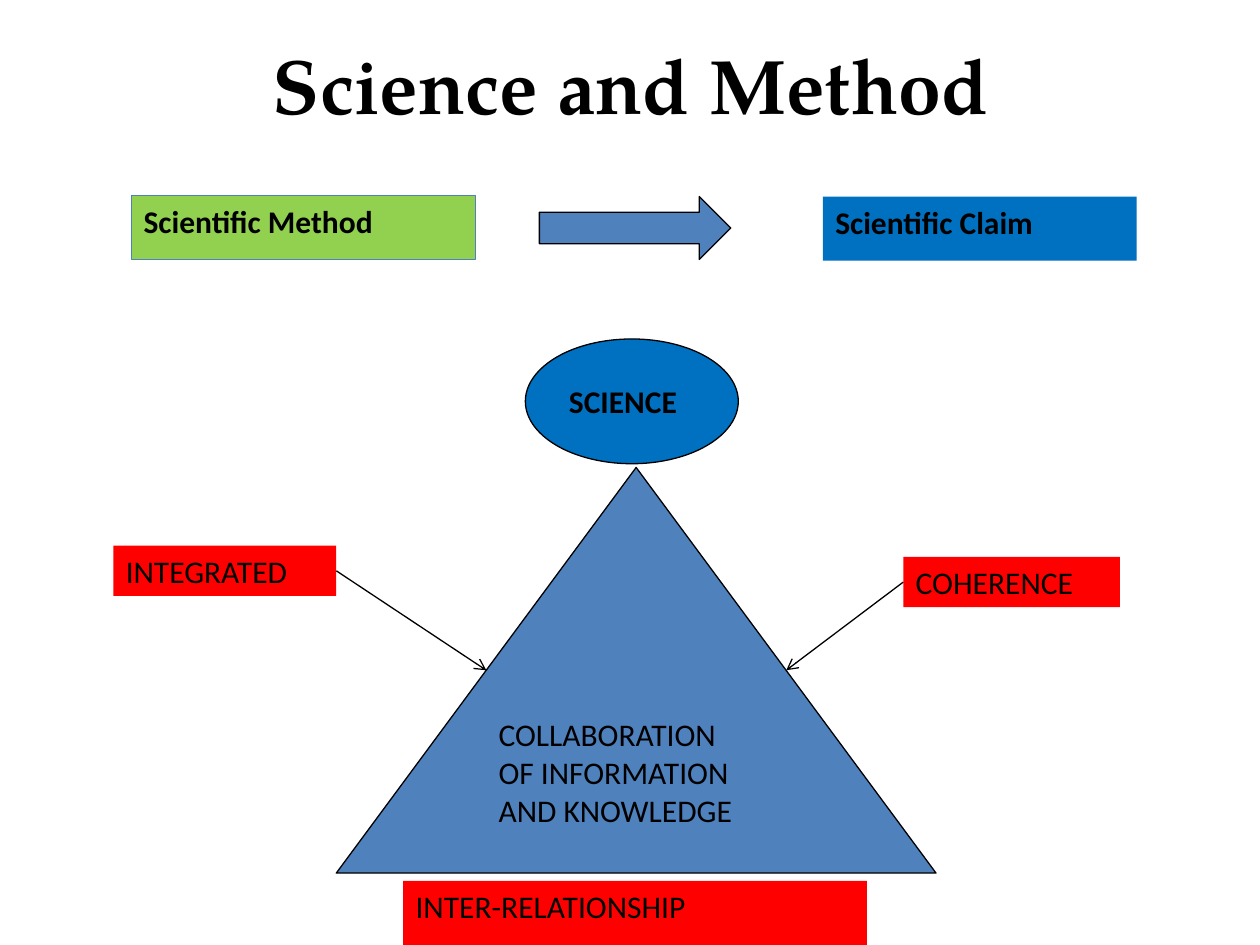
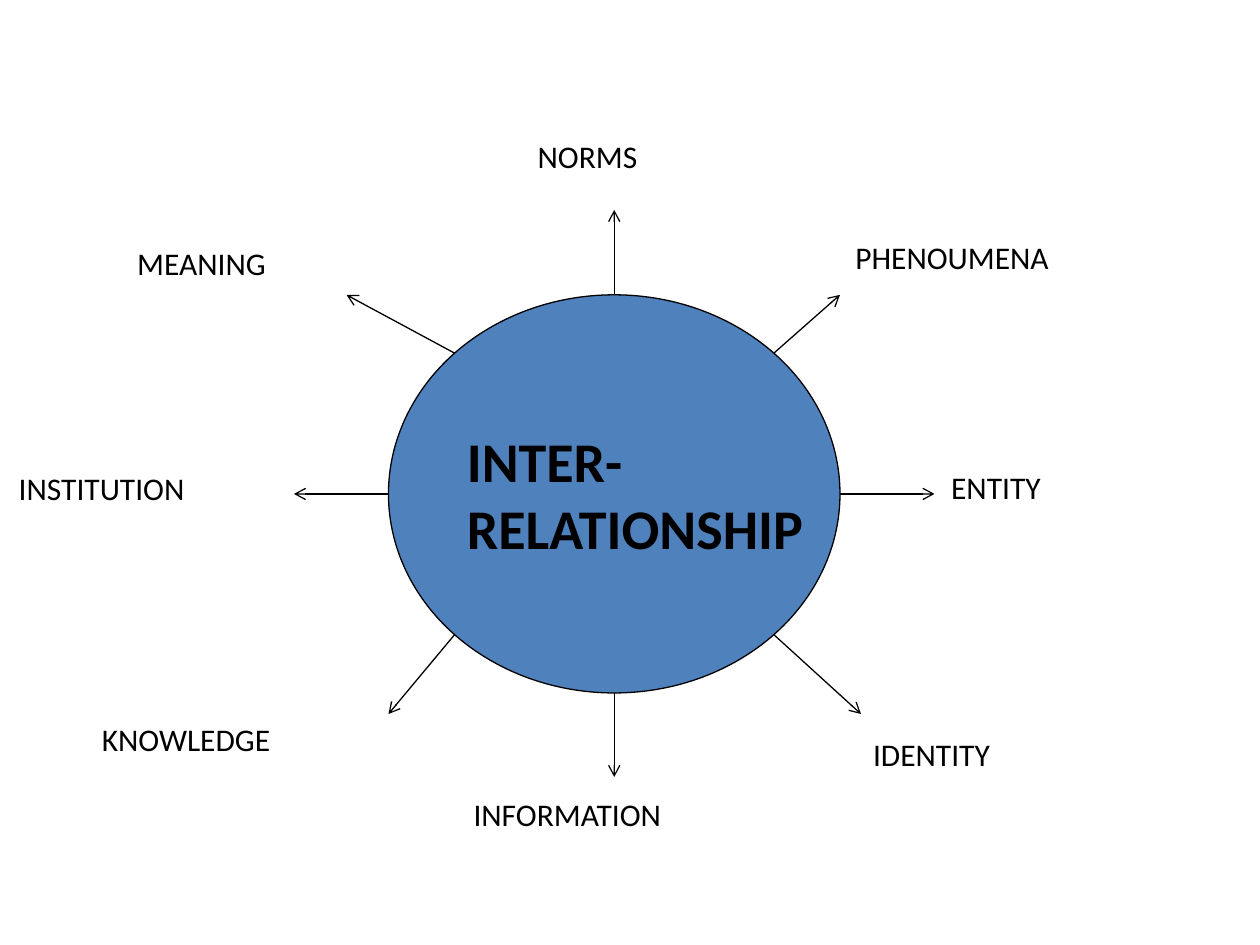
from dataclasses import dataclass
from math import cos, radians, sin
from typing import NamedTuple, Optional

from lxml import etree
from pptx import Presentation
from pptx.dml.color import RGBColor
from pptx.enum import shapes, text
from pptx.oxml import ns
from pptx.util import Pt

KIND = shapes.MSO_SHAPE
TOP, MIDDLE = text.MSO_ANCHOR.TOP, text.MSO_ANCHOR.MIDDLE
LEFT, CENTER = text.PP_ALIGN.LEFT, text.PP_ALIGN.CENTER


@dataclass(frozen=True)
class Theme:
    ink: str = "000000"
    blue: str = "4F81BD"
    deep: str = "0070C0"
    green: str = "92D050"
    red: str = "FF0000"
    head: str = "TeX Gyre Pagella"
    body: str = "Calibri"
    title: float = 44
    hub: float = 32
    label: float = 18
    line: float = 0.75


THEME = Theme()


class Area(NamedTuple):
    left: float
    top: float
    width: float
    height: float


class Style(NamedTuple):
    size: float = THEME.label
    bold: bool = False
    font: str = THEME.body
    align: text.PP_ALIGN = LEFT
    anchor: text.MSO_ANCHOR = TOP
    wrap: bool = True


class Block(NamedTuple):
    kind: shapes.MSO_SHAPE
    area: Area
    fill: str
    line: Optional[str] = None
    lines: tuple[str, ...] = ()
    style: Style = Style()


class Spoke(NamedTuple):
    """A label and the tip of the arrow that leaves the hub at an angle."""
    angle: float
    tip: tuple[float, float]
    word: str
    area: Area


def color(code: str) -> RGBColor:
    return RGBColor.from_string(code)


def write(shape, lines: tuple[str, ...], style: Style) -> None:
    frame = shape.text_frame
    frame.word_wrap = style.wrap
    frame.vertical_anchor = style.anchor
    for i, line in enumerate(lines):
        para = frame.paragraphs[0] if i == 0 else frame.add_paragraph()
        para.alignment = style.align
        run = para.add_run()
        run.text = line
        font = run.font
        font.name, font.size, font.bold = style.font, Pt(style.size), style.bold
        font.color.rgb = color(THEME.ink)


def label(slide, area: Area, word: str, style: Style = Style()) -> None:
    box = slide.shapes.add_textbox(*map(Pt, area))
    write(box, (word,), style)


def draw(slide, block: Block):
    shape = slide.shapes.add_shape(block.kind, *map(Pt, block.area))
    shape.shadow.inherit = False
    shape.fill.solid()
    shape.fill.fore_color.rgb = color(block.fill)
    if block.line:
        shape.line.color.rgb = color(block.line)
        shape.line.width = Pt(THEME.line)
    else:
        shape.line.fill.background()
    write(shape, block.lines, block.style)
    return shape


def arrow(slide, start: tuple[float, float], end: tuple[float, float]):
    link = slide.shapes.add_connector(
        shapes.MSO_CONNECTOR.STRAIGHT, *map(Pt, (*start, *end)))
    link.line.color.rgb = color(THEME.ink)
    link.line.width = Pt(THEME.line)
    etree.SubElement(link.line._get_or_add_ln(), ns.qn("a:tailEnd"), type="arrow")
    etree.SubElement(link._element.spPr, ns.qn("a:effectLst"))
    return link


BOLD = Style(bold=True)
MID = Style(anchor=MIDDLE)

BLOCKS = (
    Block(KIND.RIGHT_ARROW, Area(308.2, 112.3, 109.4, 36), THEME.blue, THEME.ink),
    Block(KIND.RECTANGLE, Area(75, 111.6, 196.6, 36.7), THEME.green, THEME.blue,
          ("Scientific Method",), BOLD),
    Block(KIND.RECTANGLE, Area(470.2, 112.3, 179.3, 36.7), THEME.deep, None,
          ("Scientific Claim",), BOLD),
    Block(KIND.OVAL, Area(300.2, 193.7, 121.7, 71.3), THEME.deep, THEME.ink,
          ("SCIENCE",), BOLD._replace(anchor=MIDDLE)),
    Block(KIND.ISOSCELES_TRIANGLE, Area(192.2, 267.1, 342.7, 231.8), THEME.blue,
          THEME.ink, ("COLLABORATION", "OF INFORMATION", "AND KNOWLEDGE"), MID),
    Block(KIND.RECTANGLE, Area(230.4, 503.3, 265, 36.7), THEME.red, None,
          ("INTER-RELATIONSHIP",)),
)

# Each trait points at the middle of one side of the triangle.
TRAITS = (
    (Block(KIND.RECTANGLE, Area(516.2, 318.2, 123.8, 28.8), THEME.red, None,
           ("COHERENCE",)), 1, (449.3, 383)),
    (Block(KIND.RECTANGLE, Area(64.8, 311.8, 127.4, 28.8), THEME.red, None,
           ("INTEGRATED",)), 3, (277.9, 383)),
)

HUB = Block(KIND.OVAL, Area(222, 168.5, 258, 227.5), THEME.blue, THEME.ink,
            ("INTER-", "RELATIONSHIP"),
            Style(THEME.hub, True, anchor=MIDDLE, wrap=False))

SPOKES = (
    Spoke(0, (534, 282.25), "ENTITY", Area(536.4, 264.2, 102.2, 36)),
    Spoke(45, (492, 408), "IDENTITY", Area(491.8, 416.5, 127.4, 36)),
    Spoke(90, (351, 444), "INFORMATION", Area(263.5, 450.7, 181.4, 36.7)),
    Spoke(135, (222, 408), "KNOWLEDGE", Area(51.1, 407.7, 169.2, 36)),
    Spoke(180, (168, 282.25), "INSTITUTION", Area(3.6, 264.2, 167, 36.7)),
    Spoke(225, (198, 168.5), "MEANING", Area(71.3, 136.1, 129.6, 36.7)),
    Spoke(270, (351, 120), "NORMS", Area(300.2, 74.9, 100.8, 36.7)),
    Spoke(315, (480, 168.5), "PHENOUMENA", Area(481.7, 132.3, 184.3, 36.7)),
)


def method(slide) -> None:
    label(slide, Area(54.7, 18, 612, 59.8), "Science and Method",
          Style(THEME.title, True, THEME.head, CENTER, MIDDLE))
    for block in BLOCKS:
        draw(slide, block)
    for block, side, tip in TRAITS:
        box = draw(slide, block)
        arrow(slide, block.area[:2], tip).begin_connect(box, side)


def relations(slide) -> None:
    draw(slide, HUB)
    left, top, width, height = HUB.area
    for spoke in SPOKES:
        turn = radians(spoke.angle)
        rim = (left + width / 2 * (1 + cos(turn)),
               top + height / 2 * (1 + sin(turn)))
        arrow(slide, rim, spoke.tip)
        label(slide, spoke.area, spoke.word)


def main() -> None:
    deck = Presentation()
    deck.slide_width, deck.slide_height = Pt(720), Pt(540)
    for build in (method, relations):
        build(deck.slides.add_slide(deck.slide_layouts[6]))
    deck.save("out.pptx")


if __name__ == "__main__":
    main()
